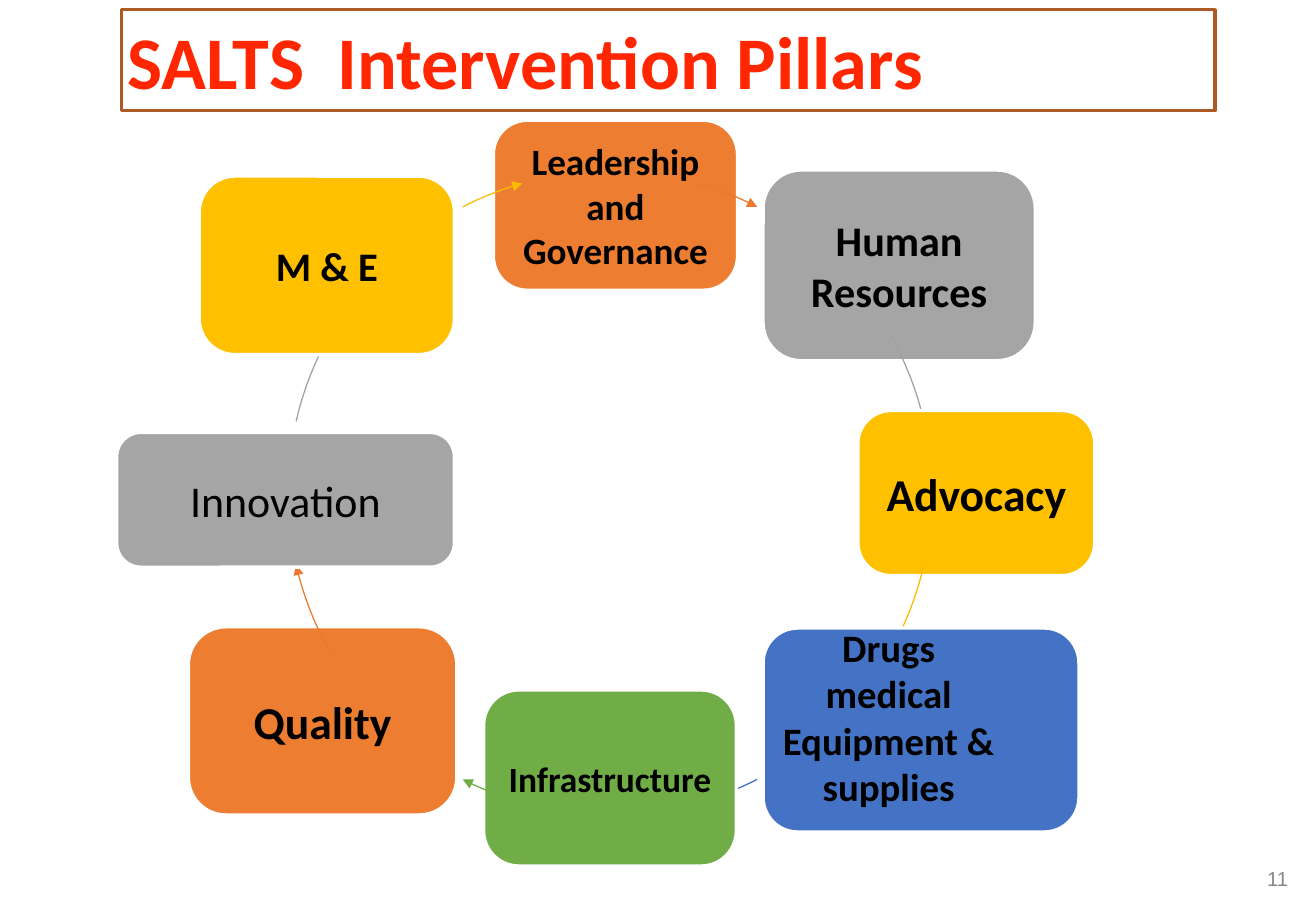
from math import cos, radians, sin

from lxml.etree import SubElement
from pptx import Presentation
from pptx.dml.color import RGBColor
from pptx.enum.shapes import MSO_SHAPE
from pptx.enum.text import MSO_ANCHOR, MSO_AUTO_SIZE, PP_ALIGN
from pptx.oxml.ns import qn
from pptx.util import Inches, Pt

COLORS = {
    "title": "FF2600", "frame": "AD5B24", "text": "000000", "number": "888888",
    "white": "FFFFFF", "orange": "ED7D31", "gray": "A5A5A5", "gold": "FFC000",
    "blue": "4472C4", "green": "70AD47",
}
ARROWS = {
    "orange": "EC792B", "gray": "A1A1A1", "gold": "F9BC00",
    "blue": "3F6EC3", "green": "6DAC43",
}

# Grid cells are a tenth of an inch: 108.3 columns by 75 rows.
COLS, ROWS = 108.3, 75
CENTER = (50.2, 40.6)
RADIUS = 26.5

# label, fill, (column, row, columns, rows), corner, text size, bold
PILLARS = [
    ("Leadership and Governance", "orange", (40.6, 9.9, 20.1, 14), 0.2, 22, True),
    ("Human Resources", "gray", (62.8, 14, 22.4, 15.7), 0.2, 25, True),
    ("Advocacy", "gold", (70.6, 33.8, 19.5, 13.6), 0.2, 27, True),
    ("Drugs medical Equipment & supplies", "blue", (62.8, 51.7, 26, 16.8), 0.17, 23, True),
    ("Infrastructure", "green", (39.8, 56.8, 20.8, 14.5), 0.2, 21, True),
    ("Quality", "orange", (15.5, 51.6, 22.1, 15.5), 0.2, 27, True),
    ("Innovation", "gray", (9.6, 35.6, 27.8, 11.1), 0.18, 26, False),
    ("M & E", "gold", (16.4, 14.5, 21, 14.7), 0.2, 24, True),
]
# Extra right and bottom insets of pillars whose label sits off centre
OFFSETS = {"blue": (5.3, 2.2)}


def grid(*cells):
    return [Inches(c / 10) for c in cells]


def rgb(value):
    return RGBColor.from_string(value)


def write(sp, text, size, color="text", font="Calibri", bold=False,
          align=PP_ALIGN.CENTER, wrap=True, right=0, bottom=0):
    tf = sp.text_frame
    tf.auto_size = MSO_AUTO_SIZE.NONE
    tf.word_wrap = wrap
    tf.vertical_anchor = MSO_ANCHOR.MIDDLE
    tf.margin_left, tf.margin_top, tf.margin_right, tf.margin_bottom = grid(
        0.5, 0.5, 0.5 + right, 0.5 + bottom)
    p = tf.paragraphs[0]
    p.alignment = align
    r = p.add_run()
    r.text = text
    r.font.name, r.font.size, r.font.bold = font, Pt(size), bold
    r.font.color.rgb = rgb(COLORS[color])


def outline(sp, color, width):
    sp.line.color.rgb = rgb(color)
    sp.line.width = Pt(width)


def add_title(s, text):
    sp = s.shapes.title
    sp.left, sp.top, sp.width, sp.height = grid(10, 0.8, 90, 8.3)
    outline(sp, COLORS["frame"], 2)
    write(sp, text, 44, "title", bold=True, align=PP_ALIGN.LEFT)


def add_pillar(s, label, fill, box, corner, size, bold):
    sp = s.shapes.add_shape(MSO_SHAPE.ROUNDED_RECTANGLE, *grid(*box))
    sp.adjustments[0] = corner
    sp.shadow.inherit = False
    sp.fill.solid()
    sp.fill.fore_color.rgb = rgb(COLORS[fill])
    outline(sp, COLORS["white"], 2)
    right, bottom = OFFSETS.get(fill, (0, 0))
    write(sp, label, size, bold=bold, right=right, bottom=bottom)


def arc_spans():
    """Start and end angles, clockwise from the top, mirrored in both axes."""
    quarter = [(15.8, 27.2), (60.5, 77.1)]
    half = quarter + [(180 - b, 180 - a) for a, b in reversed(quarter)]
    return half + [(a + 180, b + 180) for a, b in half]


def add_arc(s, start, end, color, steps=8):
    points = []
    for i in range(steps + 1):
        angle = radians(start + (end - start) * i / steps)
        points.append(grid(CENTER[0] + RADIUS * sin(angle),
                           CENTER[1] - RADIUS * cos(angle)))
    builder = s.shapes.build_freeform(*points[0])
    builder.add_line_segments(points[1:], close=False)
    sp = builder.convert_to_shape()
    sp.shadow.inherit = False
    sp.fill.background()
    outline(sp, ARROWS[color], 0.75)
    SubElement(sp.line._get_or_add_ln(), qn("a:tailEnd"), type="triangle")


def add_number(s, text):
    sp = s.shapes.add_textbox(*grid(103.6, 70.9, 2.9, 2.9))
    write(sp, text, 12, "number", "Arial", align=PP_ALIGN.RIGHT, wrap=False)


def main():
    prs = Presentation()
    prs.slide_width, prs.slide_height = grid(COLS, ROWS)
    s = prs.slides.add_slide(prs.slide_layouts[5])
    add_title(s, "SALTS  Intervention Pillars")
    for pillar, span in zip(PILLARS, arc_spans()):
        add_pillar(s, *pillar)
        add_arc(s, *span, color=pillar[1])
    add_number(s, "11")
    prs.save("out.pptx")


if __name__ == "__main__":
    main()
